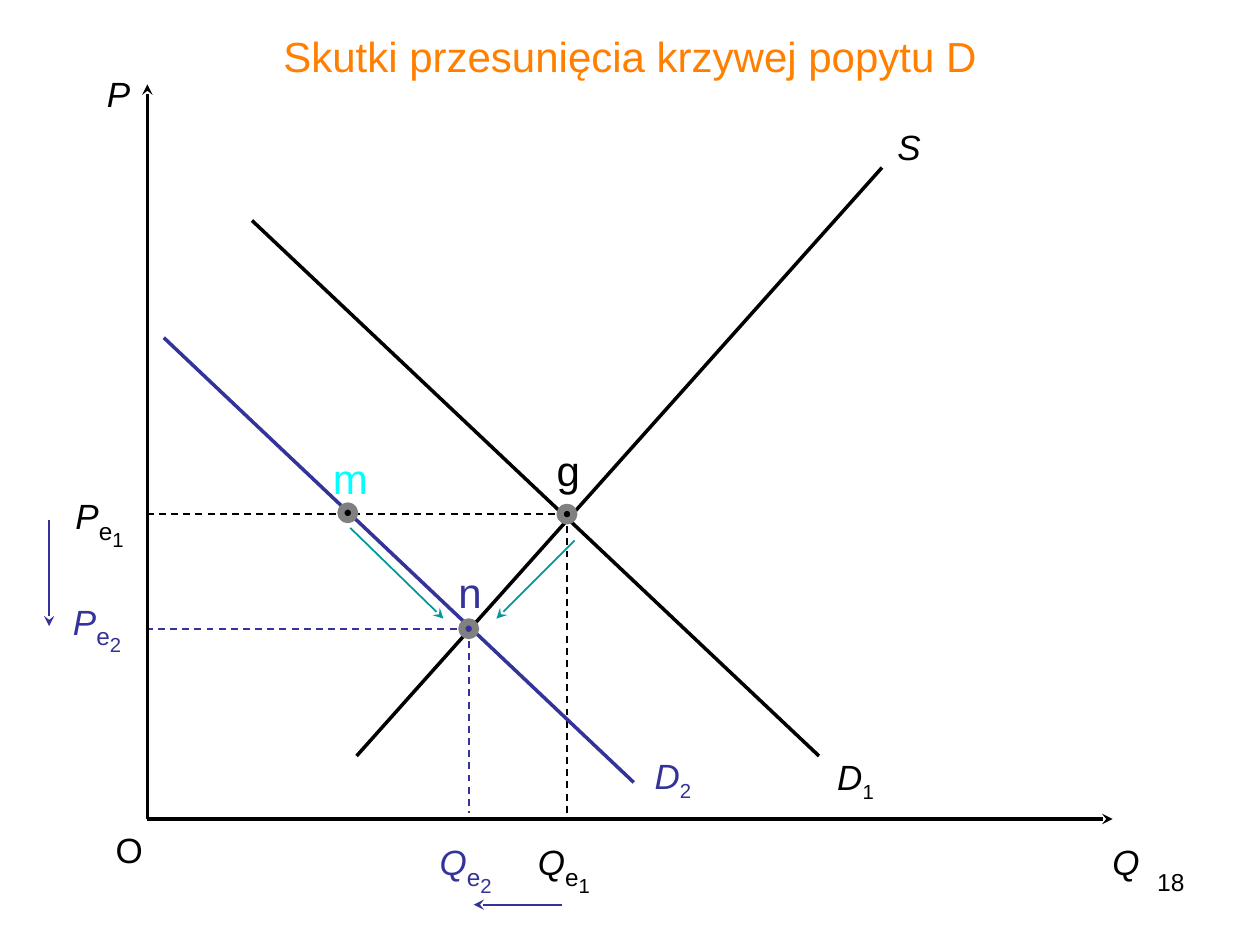
import pptx
import pptx.util
import pptx.dml.color
import pptx.enum.dml
import pptx.enum.shapes
import pptx.enum.text
import lxml.etree
from pptx.oxml.ns import qn

INK = {"black": "000000", "blue": "333399", "teal": "009999",
       "cyan": "00FFFF", "gray": "808080", "orange": "FF8000"}
LEFT = pptx.enum.text.PP_ALIGN.LEFT
MID = pptx.enum.text.PP_ALIGN.CENTER
RIGHT = pptx.enum.text.PP_ALIGN.RIGHT
FIT = pptx.enum.text.MSO_AUTO_SIZE

deck = pptx.Presentation()
deck.slide_width = pptx.util.Inches(10)
deck.slide_height = pptx.util.Inches(7.5)
slide = deck.slides.add_slide(deck.slide_layouts[6])
shapes = slide.shapes

# Grid: 100 columns by 75 rows
COL = deck.slide_width / 100
ROW = deck.slide_height / 75
rgb = {name: pptx.dml.color.RGBColor.from_string(code) for name, code in INK.items()}


def draw(start, end, ink, width, dash=False, arrow=False):
    line = shapes.add_connector(
        pptx.enum.shapes.MSO_CONNECTOR.STRAIGHT,
        int(start[0] * COL), int(start[1] * ROW), int(end[0] * COL), int(end[1] * ROW))
    line.line.color.rgb = rgb[ink]
    line.line.width = pptx.util.Pt(width)
    if dash:
        line.line.dash_style = pptx.enum.dml.MSO_LINE.DASH
    props = line._element.spPr
    if arrow:
        stroke = props.find(qn("a:ln"))
        lxml.etree.SubElement(stroke, qn("a:tailEnd"), type="stealth")
    lxml.etree.SubElement(props, qn("a:effectLst"))


def write(box, runs, ink, align=LEFT, wrap=False, fit=True):
    """Each run is (text, size, italic, baseline in percent)."""
    x, y, w, h = box
    label = shapes.add_textbox(int(x * COL), int(y * ROW), int(w * COL), int(h * ROW))
    frame = label.text_frame
    frame.word_wrap = wrap
    frame.auto_size = FIT.SHAPE_TO_FIT_TEXT if fit else FIT.NONE
    para = frame.paragraphs[0]
    para.alignment = align
    for text, size, italic, base in runs:
        run = para.add_run()
        run.text = text
        run.font.name = "Arial"
        run.font.size = pptx.util.Pt(size)
        run.font.italic = italic
        run.font.color.rgb = rgb[ink]
        if base:
            run._r.get_or_add_rPr().set("baseline", str(base * 1000))
    return frame


# Axes
zero = (11.7, 65)
draw(zero, (88.3, 65), "black", 2, arrow=True)
draw(zero, (11.7, 6.7), "black", 2, arrow=True)

# Dashed guides to both axes
for point, left, foot, ink in [((37.2, 49.9), 11.8, 64.5, "blue"),
                               ((45, 40.8), 11.7, 65, "black")]:
    draw(point, (left, point[1]), ink, 1, dash=True)
    draw(point, (point[0], foot), ink, 1, dash=True)

# Supply and demand curves
draw((28.3, 60), (70, 13.3), "black", 2)
draw((20, 17.5), (65, 60), "black", 2)
draw((13, 26.8), (50.3, 62.1), "blue", 2)

# Points g, n and m
dot = 1.1
for x, y, ink in [(45, 40.8, "black"), (37.2, 49.9, "blue"), (27.6, 40.7, "black")]:
    mark = shapes.add_shape(
        pptx.enum.shapes.MSO_SHAPE.OVAL, int((x - dot / 2) * COL),
        int((y - dot / 2) * ROW), int(dot * COL), int(dot * ROW))
    mark.shadow.inherit = False
    mark.fill.solid()
    mark.fill.fore_color.rgb = rgb[ink]
    mark.line.color.rgb = rgb["gray"]
    mark.line.width = pptx.util.Pt(4)

# Arrows of change
for start, end, ink in [((3.9, 41.3), (3.9, 49.7), "blue"),
                        ((44.6, 71.8), (37.6, 71.8), "blue"),
                        ((27.8, 41.9), (35.2, 49.1), "teal"),
                        ((45.6, 42.9), (39.4, 49.1), "teal")]:
    draw(start, end, ink, 1, arrow=True)

# Axis and supply labels
write((7.5, 5.3, 3.7, 4.3), [("P", 20, True, 0)], "black", wrap=True)
write((87.3, 66.2, 4.2, 4.3), [("Q", 20, True, 0)], "black")
write((8.2, 65.3, 4.2, 4.3), [("O", 20, False, 0)], "black")
write((70.2, 9.5, 3.9, 4.3), [("S", 20, True, 0)], "black", MID)

# Demand labels
for x, y, digit, ink in [(65.4, 59.5, "1", "black"), (50.9, 59.4, "2", "blue")]:
    write((x, y, 5, 4.3), [("D", 20, True, 0), (digit, 20, False, -25)], ink, MID)

# Equilibrium price and quantity labels
for x, y, name, digit, ink in [(5, 38.2, "P", "1", "black"), (41.7, 65.7, "Q", "1", "black"),
                               (4.8, 46.6, "P", "2", "blue"), (33.9, 65.7, "Q", "2", "blue")]:
    write((x, y, 7.5, 4.3),
          [(name, 20, True, 0), ("e", 24, False, -25), (digit, 20, False, -50)],
          ink, wrap=True)

# Point labels
for x, y, w, name, ink, align in [(43.2, 34.8, 3.9, "g", "black", LEFT),
                                  (35.4, 44.5, 3.9, "n", "blue", LEFT),
                                  (25.4, 35.4, 4.8, "m", "cyan", MID)]:
    write((x, y, w, 5), [(name, 24, False, 0)], ink, align)

# Title and page number
title = write((7.5, 0.5, 85, 7.8), [("Skutki przesunięcia krzywej popytu D", 24, False, 0)],
              "orange", MID, wrap=True, fit=False)
title.vertical_anchor = pptx.enum.text.MSO_ANCHOR.MIDDLE
write((71.7, 68.3, 23.3, 5.2), [("18", 14, False, 0)], "black", RIGHT, wrap=True, fit=False)

deck.save("out.pptx")
